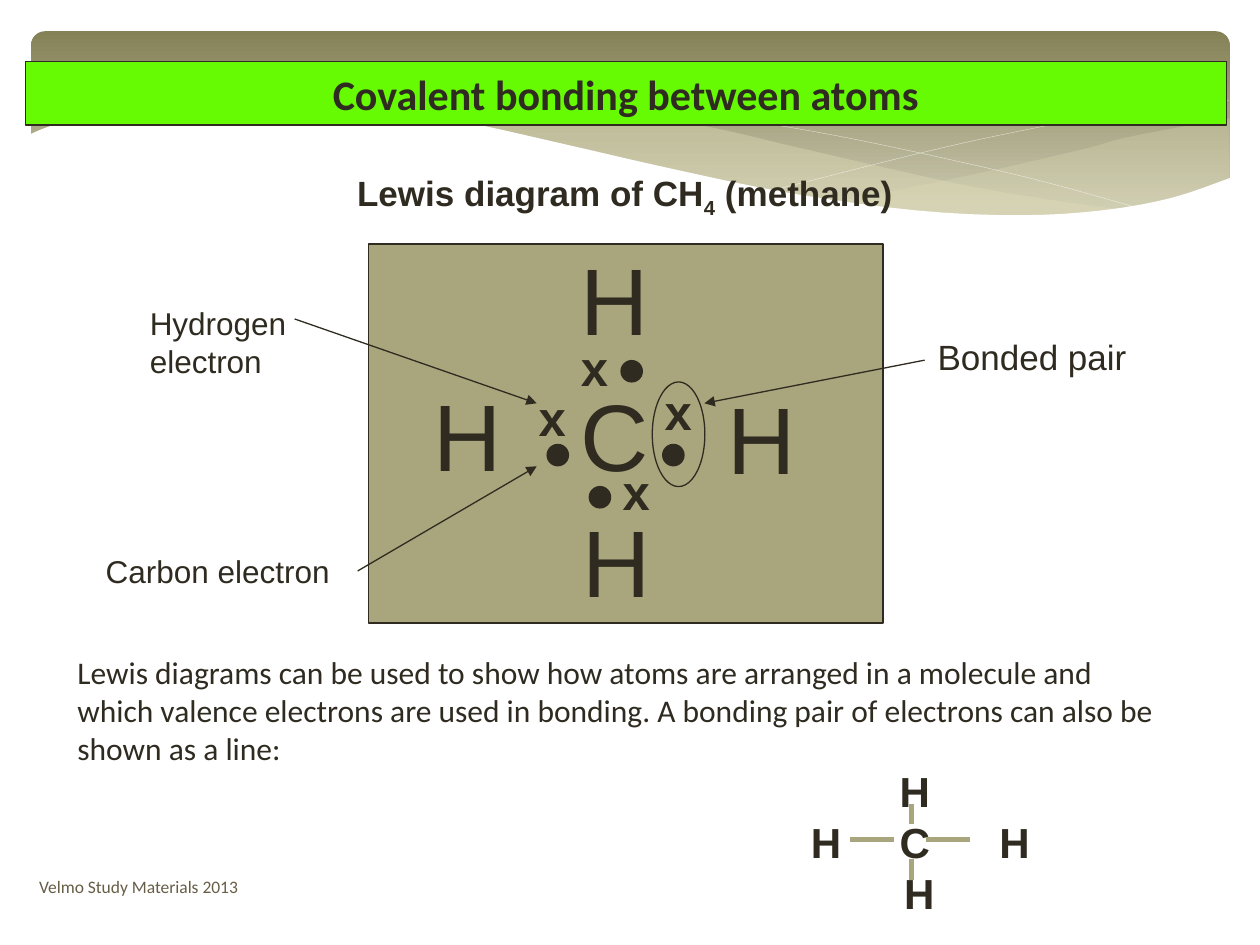
from pptx import Presentation
from pptx.dml.color import RGBColor
from pptx.enum.shapes import MSO_CONNECTOR, MSO_SHAPE
from pptx.enum.text import MSO_ANCHOR as Anchor, PP_ALIGN as Align
from pptx.oxml.ns import qn
from pptx.util import Cm, Pt
from lxml.etree import SubElement

INK = RGBColor(0x2F, 0x2B, 0x20)
BROWN = RGBColor(0x67, 0x5E, 0x47)
OLIVE = RGBColor(0x85, 0x81, 0x57)
SAND = RGBColor(0xCB, 0xC9, 0xB0)
CREAM = RGBColor(0xDF, 0xDC, 0xB7)
KHAKI = RGBColor(0xA9, 0xA5, 0x7C)
GREEN = RGBColor(0x67, 0xFB, 0x03)
WHITE = RGBColor(0xFF, 0xFF, 0xFF)

# Knots of the header waves, in centimetres
RIGHT_TOP = [(24.79, 2.39), (23.75, 2.57), (22.63, 2.79), (21.87, 3.0),
             (19.79, 3.48), (17.93, 3.86), (16.79, 4.06)]
RIGHT_BOTTOM = [(16.79, 4.06), (17.91, 4.19), (19.23, 4.32), (20.68, 4.37),
                (21.92, 4.32), (22.99, 4.14), (23.93, 3.91), (24.79, 3.58)]
LEFT_TOP = [(22.68, 4.24), (21.26, 4.04), (19.69, 3.78), (17.93, 3.4),
            (15.98, 2.95), (14.45, 2.59), (13.06, 2.34), (11.81, 2.18),
            (10.67, 2.08), (9.17, 2.03), (7.95, 2.08), (7.26, 2.18)]
LEFT_BOTTOM = [(7.26, 2.18), (8.69, 2.39), (10.26, 2.69), (11.4, 2.95),
               (13.46, 3.43), (15.27, 3.81), (16.89, 4.09), (18.34, 4.27),
               (19.63, 4.37), (20.78, 4.39), (21.77, 4.34), (22.68, 4.24)]
FALLING_LINE = [(7.85, 2.29), (8.74, 2.13), (10.19, 2.08), (11.43, 2.08),
                (12.95, 2.18), (14.78, 2.39), (16.89, 2.74), (19.3, 3.25),
                (21.11, 3.68), (23.04, 4.22)]
RISING_LINE = [(15.57, 3.84), (16.59, 3.58), (18.29, 3.15), (19.71, 2.82),
               (21.23, 2.51), (22.73, 2.24), (23.83, 2.11), (24.77, 2.03)]
WHITE_EDGE = [(24.82, 3.58), (23.62, 3.99), (22.23, 4.24), (20.55, 4.34),
              (18.44, 4.24), (15.9, 3.89), (13.44, 3.38), (11.35, 2.9),
              (9.27, 2.44), (7.42, 2.16), (5.84, 2.01), (4.5, 1.98),
              (3.02, 2.08), (1.93, 2.26), (1.02, 2.54), (0.58, 2.72)]
WHITE_CORNERS = [(0.58, 5.69), (24.82, 5.69)]


def smooth(knots, steps=4):
    """Points of a Catmull-Rom curve through the knots."""
    padded = [knots[0], *knots, knots[-1]]
    points = [knots[0]]
    for a, b, c, d in zip(padded, padded[1:], padded[2:], padded[3:]):
        for t in (step / steps for step in range(1, steps + 1)):
            points.append(tuple(
                0.5 * (2 * q + (r - p) * t + (2 * p - 5 * q + 4 * r - s) * t ** 2
                       + (3 * q - p - 3 * r + s) * t ** 3)
                for p, q, r, s in zip(a, b, c, d)))
    return points


def paint(shape, fill=None, line=None, width=0.75):
    shape.shadow.inherit = False
    for part, color in ((shape.fill, fill), (shape.line.fill, line)):
        if color is None:
            part.background()
        else:
            part.solid()
            part.fore_color.rgb = color
    if line is not None:
        shape.line.width = Pt(width)


def add_shape(page, kind, left, top, width, height, fill=None, line=None):
    shape = page.shapes.add_shape(kind, Cm(left), Cm(top), Cm(width), Cm(height))
    paint(shape, fill, line)
    return shape


def add_wave(page, points, fill=None, opacity=100, line=None):
    corners = [(Cm(x), Cm(y)) for x, y in points]
    builder = page.shapes.build_freeform(*corners[0])
    builder.add_line_segments(corners[1:], close=fill is not None)
    wave = builder.convert_to_shape()
    paint(wave, fill, line, 0.1)
    if opacity < 100:
        color = wave.fill._xPr.find(qn("a:solidFill"))[0]
        SubElement(color, qn("a:alpha"), val=str(opacity * 1000))


def add_run(para, text, size, font="Arial", bold=False, color=INK):
    span = para.add_run()
    span.text = text
    span.font.name, span.font.size, span.font.bold = font, Pt(size), bold
    span.font.color.rgb = color
    return span


def add_text(page, text, left, top, width, height, size, font="Arial",
             bold=False, color=INK, anchor=Anchor.TOP):
    box = page.shapes.add_textbox(Cm(left), Cm(top), Cm(width), Cm(height))
    box.text_frame.word_wrap = True
    box.text_frame.vertical_anchor = anchor
    para = box.text_frame.paragraphs[0]
    add_run(para, text, size, font, bold, color)
    return para


def add_line(page, start, end, color=INK, width=0.75, arrow=False):
    line = page.shapes.add_connector(
        MSO_CONNECTOR.STRAIGHT, *(Cm(value) for value in start + end))
    line.line.color.rgb = color
    line.line.width = Pt(width)
    if arrow:
        SubElement(line.line._get_or_add_ln(), qn("a:tailEnd"), type="triangle")
    SubElement(line._element.spPr, qn("a:effectLst"))


def add_backdrop(page):
    band = add_shape(page, MSO_SHAPE.ROUNDED_RECTANGLE, 0.63, 0.63, 24.16, 3.96)
    band.adjustments[0] = 0.07
    band.fill.gradient()
    band.fill.gradient_angle = 270
    for stop, color, position in zip(band.fill.gradient_stops, (OLIVE, SAND), (0, 0.9)):
        stop.color.rgb, stop.position = color, position
    add_wave(page, smooth(RIGHT_TOP) + smooth(RIGHT_BOTTOM), CREAM, 29)
    add_wave(page, smooth(LEFT_TOP) + smooth(LEFT_BOTTOM), CREAM, 40)
    for knots in (FALLING_LINE, RISING_LINE):
        add_wave(page, smooth(knots), line=WHITE)
    add_wave(page, smooth(WHITE_EDGE) + WHITE_CORNERS, WHITE)


def format_title(page, text):
    title = page.shapes.title
    page.shapes._spTree.append(title._element)  # in front of the backdrop
    title.left, title.top, title.width, title.height = Cm(0.51), Cm(1.24), Cm(24.21), Cm(1.28)
    title.fill.solid()
    title.fill.fore_color.rgb = GREEN
    title.line.color.rgb = INK
    title.line.width = Pt(0.75)
    title.text_frame.vertical_anchor = Anchor.MIDDLE
    para = title.text_frame.paragraphs[0]
    para.alignment = Align.CENTER
    add_run(para, text, 24, "Calibri", True)


def add_lewis_diagram(page):
    add_shape(page, MSO_SHAPE.RECTANGLE, 7.43, 4.92, 10.37, 7.64, KHAKI, INK)
    for symbol, left, top in (("H", 8.48, 7.48), ("H", 14.42, 7.53), ("C", 11.45, 7.48),
                              ("H", 11.49, 10.02), ("H", 11.45, 4.73)):
        add_text(page, symbol, left, top, 2.74, 2.56, 54)
    # Carbon electrons are dots, hydrogen electrons are crosses
    for left, top in ((11.03, 8.96), (11.88, 9.81), (13.36, 8.96), (12.52, 7.27)):
        add_shape(page, MSO_SHAPE.OVAL, left, top, 0.43, 0.43, INK, INK)
    for left, top in ((10.61, 7.69), (13.15, 7.56), (12.3, 9.18), (11.46, 6.68)):
        add_text(page, "x", left, top, 1.07, 1.44, 28, bold=True)
    add_shape(page, MSO_SHAPE.OVAL, 13.15, 7.7, 1.06, 2.11, line=INK)


def add_labels(page):
    caption = add_text(page, "Lewis diagram of CH", 6.95, 3.34, 11.96, 1.11, 20, bold=True)
    add_run(caption, "4", 20, bold=True).font._element.set("baseline", "-25000")
    add_run(caption, " (methane)", 20, bold=True)
    add_text(page, "Bonded pair", 18.65, 6.64, 5.28, 1.11, 20)
    add_text(page, "Hydrogen electron", 2.77, 6, 4.45, 1.8, 18)
    add_text(page, "Carbon electron", 1.88, 11, 5.92, 1.02, 18)
    for start, end in (((18.64, 7.26), (14.2, 8.13)), ((5.94, 6.43), (10.82, 8.13)),
                       ((7.21, 11.51), (10.82, 9.4))):
        add_line(page, start, end, arrow=True)


def add_line_formula(page):
    size = 1.2
    for symbol, x, y in (("H", 18.44, 15.95), ("H", 16.65, 16.97), ("C", 18.44, 16.97),
                         ("H", 20.45, 16.97), ("H", 18.53, 17.99)):
        para = add_text(page, symbol, x - size / 2, y - size / 2, size, size, 24,
                        bold=True, anchor=Anchor.MIDDLE)
        para.alignment = Align.CENTER
    for start, end in (((18.67, 16.92), (19.56, 16.92)), ((17.14, 16.92), (18.03, 16.92)),
                       ((18.37, 16.61), (18.37, 16.21)), ((18.37, 17.73), (18.37, 17.32))):
        add_line(page, start, end, KHAKI, 3)


def main():
    deck = Presentation()
    deck.slide_width, deck.slide_height = Cm(25.4), Cm(19.05)
    page = deck.slides.add_slide(deck.slide_layouts[5])
    add_backdrop(page)
    add_text(page, "Velmo Study Materials 2013", 0.54, 17.37, 10.52, 1.02, 10,
             "Calibri", color=BROWN, anchor=Anchor.MIDDLE)
    format_title(page, "Covalent bonding between atoms")
    add_lewis_diagram(page)
    add_labels(page)
    add_text(page, "Lewis diagrams can be used to show how atoms are arranged in a molecule "
             "and which valence electrons are used in bonding. A bonding pair of electrons "
             "can also be shown as a line:", 1.31, 13.04, 22.4, 2.6, 18, "Calibri")
    add_line_formula(page)
    deck.save("out.pptx")


if __name__ == "__main__":
    main()
